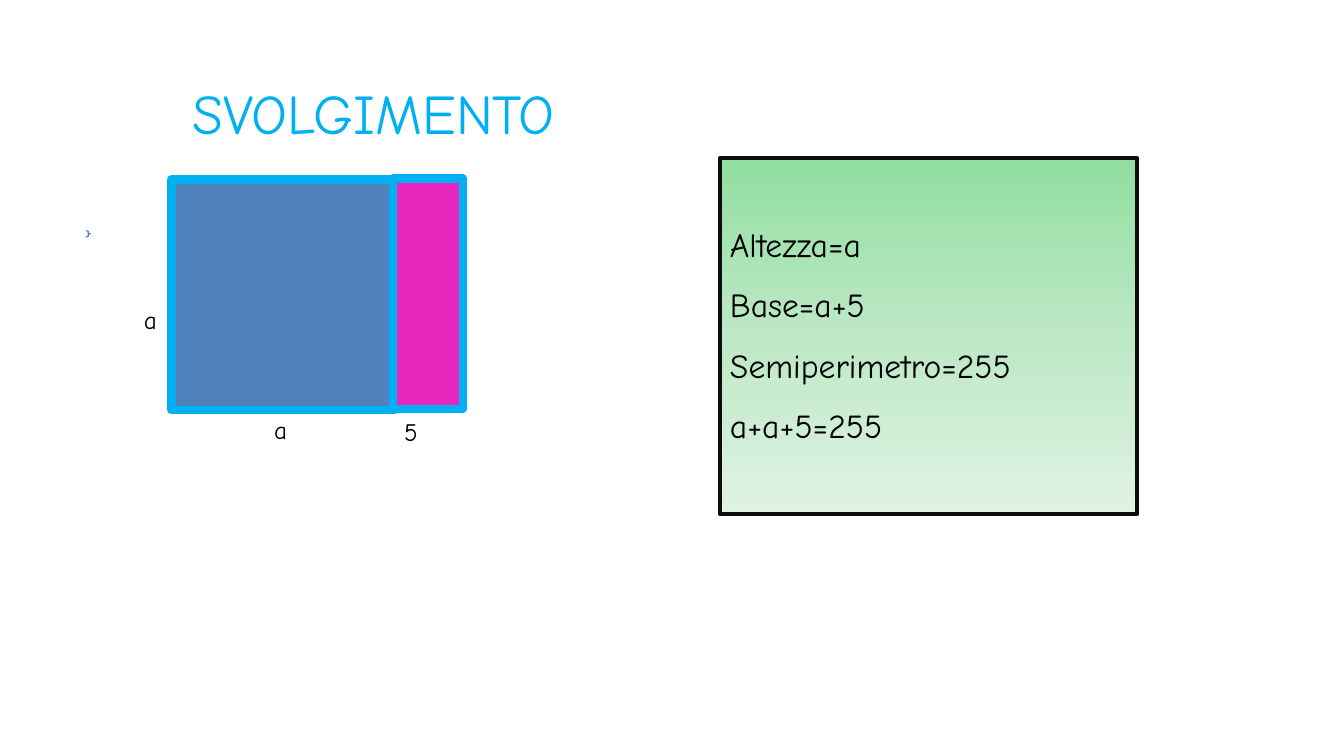
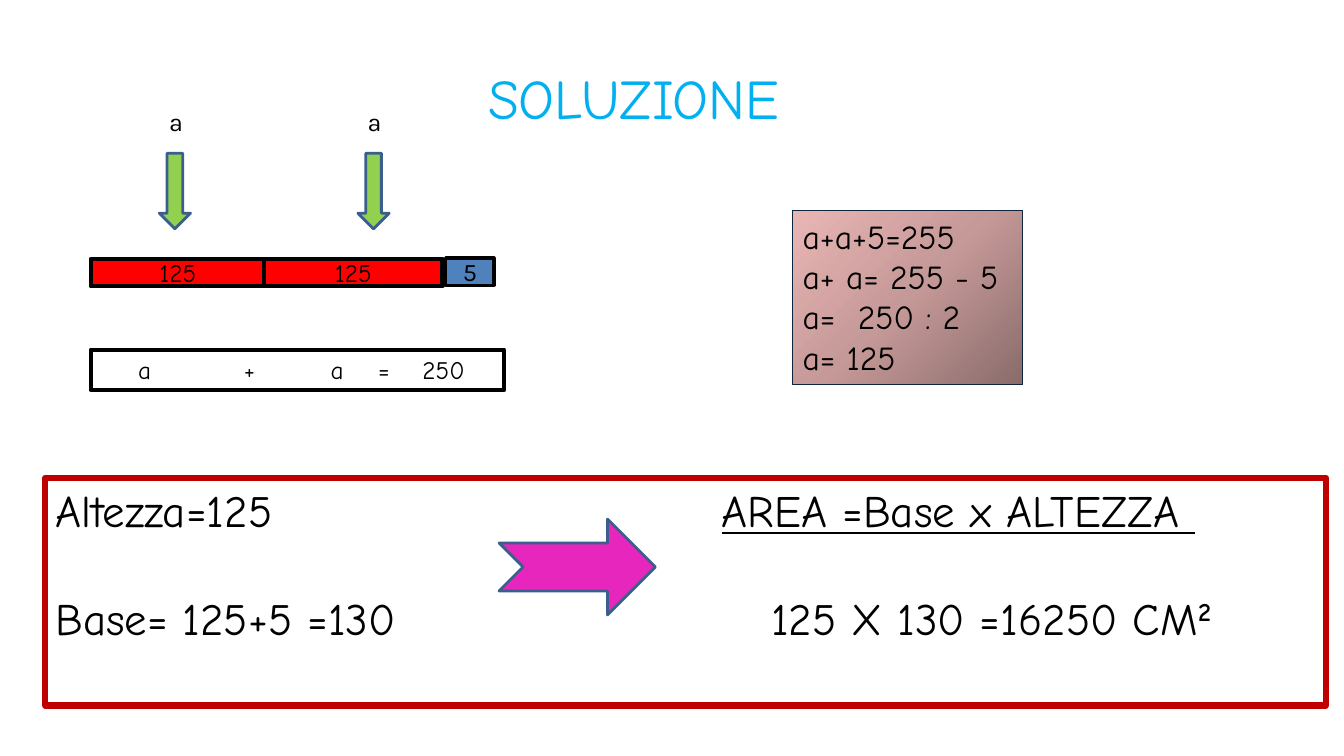
"""Build two slides that solve a rectangle problem with algebra."""
from dataclasses import dataclass

from pptx import Presentation
from pptx.dml.color import RGBColor
from pptx.enum.shapes import MSO_SHAPE
from pptx.enum.text import MSO_ANCHOR, MSO_AUTO_SIZE, PP_ALIGN
from pptx.oxml import parse_xml
from pptx.oxml.ns import nsdecls, qn
from pptx.util import Inches, Pt

RECT = MSO_SHAPE.RECTANGLE
BRACE = MSO_SHAPE.RIGHT_BRACE
DOWN = MSO_SHAPE.DOWN_ARROW
NOTCH = MSO_SHAPE.NOTCHED_RIGHT_ARROW
TOP, MID, LOW = MSO_ANCHOR.TOP, MSO_ANCHOR.MIDDLE, MSO_ANCHOR.BOTTOM
LEFT, MIDST = PP_ALIGN.LEFT, PP_ALIGN.CENTER
FIXED = MSO_AUTO_SIZE.NONE

HEX = {
    "black": "000000", "ink": "0D0D0D", "navy": "0F243E", "edge": "3A5F8C",
    "blue": "4F81BD", "sky": "00B0F0", "pink": "E626BD", "red": "FF0000",
    "wine": "C00000", "lime": "92D050",
}
GREENS = ("91DEA0", "BDE8C5", "DFF3E3")
ROSES = ("8A6C6B", "C59998", "E9B6B4")
DOWNWARD = '<a:lin ang="5400000" scaled="0"/>'
CORNER = '<a:path path="circle"><a:fillToRect l="100000" t="100000"/></a:path>'
COMIC, KARLA = "Comic Neue", "Karla"


@dataclass(frozen=True)
class Box:
    x: float
    y: float
    w: float
    h: float


@dataclass(frozen=True)
class Run:
    text: str
    under: bool = False
    bold: bool = False
    lift: int = 0


@dataclass(frozen=True)
class Style:
    size: int = 18
    font: str = COMIC
    color: str = "black"
    align: PP_ALIGN = LEFT
    anchor: MSO_ANCHOR = TOP
    pitch: float = 1.0
    gap: float = 0


@dataclass(frozen=True)
class Part:
    kind: MSO_SHAPE
    box: Box
    fill: str
    line: str
    width: float
    text: str = ""
    font: str = COMIC


TITLE = Style(size=40, color="sky")
SMALL = Style()
BAR = Style(align=MIDST, anchor=MID)


def place(shape, box: Box) -> None:
    shape.left, shape.top = Inches(box.x), Inches(box.y)
    shape.width, shape.height = Inches(box.w), Inches(box.h)


def outline(shape, color: str, width: float) -> None:
    shape.line.color.rgb = RGBColor.from_string(HEX[color])
    shape.line.width = Pt(width)


def blend(shape, stops: tuple, course: str) -> None:
    shape.fill.gradient()
    marks = "".join(
        f'<a:gs pos="{i * 50000}"><a:srgbClr val="{c}"/></a:gs>'
        for i, c in enumerate(stops))
    props = shape._element.spPr
    props.replace(props.find(qn("a:gradFill")), parse_xml(
        f'<a:gradFill {nsdecls("a")} rotWithShape="1">'
        f"<a:gsLst>{marks}</a:gsLst>{course}</a:gradFill>"))


def write(shape, rows: list, style: Style, tabs: tuple = ()) -> None:
    frame = shape.text_frame
    frame.word_wrap = True
    frame.auto_size = FIXED
    frame.vertical_anchor = style.anchor
    for i, row in enumerate(rows):
        para = frame.add_paragraph() if i else frame.paragraphs[0]
        para.alignment = style.align
        para.line_spacing = style.pitch
        para.space_before = Pt(style.gap if i else 0)
        for part in row:
            run = para.add_run()
            run.text = part.text
            font = run.font
            font.name, font.size = style.font, Pt(style.size)
            font.color.rgb = RGBColor.from_string(HEX[style.color])
            font.underline, font.bold = part.under, part.bold
            if part.lift:
                font._element.set("baseline", str(part.lift * 1000))
        if tabs:
            stops = "".join(
                f'<a:tab pos="{Inches(t)}" algn="l"/>' for t in tabs)
            para._p.get_or_add_pPr().append(parse_xml(
                f'<a:tabLst {nsdecls("a")}>{stops}</a:tabLst>'))


def label(slide, box: Box, text: str, style: Style) -> None:
    shape = slide.shapes.add_textbox(0, 0, 0, 0)
    place(shape, box)
    write(shape, [[Run(text)]], style)


def draw(slide, part: Part):
    shape = slide.shapes.add_shape(part.kind, 0, 0, 0, 0)
    place(shape, part.box)
    shape.shadow.inherit = False
    if part.fill:
        shape.fill.solid()
        shape.fill.fore_color.rgb = RGBColor.from_string(HEX[part.fill])
    else:
        shape.fill.background()
    outline(shape, part.line, part.width)
    if part.text:
        style = Style(font=part.font, align=BAR.align, anchor=BAR.anchor)
        write(shape, [[Run(part.text)]], style)
    return shape


def begin(deck, title: str, box: Box):
    slide = deck.slides.add_slide(deck.slide_layouts[1])
    place(slide.shapes.title, box)
    write(slide.shapes.title, [[Run(title)]], TITLE)
    return slide


def steps(slide, box: Box, lines: list, style: Style):
    body = slide.placeholders[1]
    place(body, box)
    write(body, [[Run(line)] for line in lines], style)
    for para in body.text_frame.paragraphs:
        props = para._p.get_or_add_pPr()
        props.set("marL", "0")
        props.set("indent", "0")
        props.append(parse_xml(f'<a:buNone {nsdecls("a")}/>'))
    return body


def setup(deck) -> None:
    slide = begin(deck, "SVOLGIMENTO", Box(1.81, 0.73, 9.84, 0.77))
    for part in (
        Part(RECT, Box(1.7, 1.78, 2.22, 2.29), "blue", "sky", 6),
        Part(RECT, Box(3.9, 1.77, 0.69, 2.29), "pink", "sky", 6),
        Part(BRACE, Box(0.85, 2.29, 0.05, 0.06), "", "blue", 0.79),
    ):
        draw(slide, part)
    for x, y, w, text in (
        (1.33, 2.97, 0.33, "a"), (2.62, 4.06, 0.73, "a"),
        (3.91, 4.08, 0.61, "5"),
    ):
        label(slide, Box(x, y, w, 0.4), text, SMALL)
    body = steps(
        slide, Box(7.14, 1.57, 4.14, 3.53),
        ["Altezza=a", "Base=a+5", "Semiperimetro=255", "a+a+5=255"],
        Style(size=24, anchor=LOW, pitch=1.5))
    body.text_frame.margin_bottom = Inches(0.68)
    blend(body, GREENS, DOWNWARD)
    outline(body, "ink", 3)


def solve(deck) -> None:
    slide = begin(deck, "SOLUZIONE", Box(4.74, 0.58, 4.77, 0.77))
    for part in (
        Part(RECT, Box(0.9, 2.57, 1.73, 0.27), "red", "black", 3, "125"),
        Part(RECT, Box(2.62, 2.57, 1.77, 0.27), "red", "black", 3, "125"),
        Part(RECT, Box(4.42, 2.56, 0.48, 0.27), "blue", "black", 2.25, "5",
             KARLA),
    ):
        draw(slide, part)
    for x in (1.58, 3.55):
        draw(slide, Part(DOWN, Box(x, 1.52, 0.31, 0.75), "lime", "edge", 2))
        label(slide, Box(x - 0.14, 1.01, 0.61, 0.4), "a",
              Style(font=KARLA, align=MIDST))

    total = draw(slide, Part(RECT, Box(0.9, 3.47, 4.1, 0.4), "", "black", 3))
    total.text_frame.margin_left = Inches(0.47)
    write(total, [[Run("a\t+\ta\t=\t250")]], SMALL, (1.05, 1.91, 2.38, 2.82))

    body = steps(
        slide, Box(7.86, 2.09, 2.28, 1.72),
        ["a+a+5=255", "a+ a= 255 - 5", "a=  250 : 2", "a= 125"],
        Style(size=24))
    blend(body, ROSES, CORNER)
    outline(body, "navy", 0.75)

    area = draw(slide, Part(RECT, Box(0.45, 4.74, 12.7, 2.26), "", "wine", 4.5))
    write(area, [
        [Run("Altezza=125\t"), Run("AREA =Base x ALTEZZA ", under=True)],
        [Run("Base= 125+5 =130\t125 X 130 =16250 CM"),
         Run("2", bold=True, lift=30)],
    ], Style(size=32, gap=38.5))
    for para, stop in zip(area.text_frame.paragraphs, (6.61, 7.1)):
        para._p.get_or_add_pPr().append(parse_xml(
            f'<a:tabLst {nsdecls("a")}>'
            f'<a:tab pos="{Inches(stop)}" algn="l"/></a:tabLst>'))
    draw(slide, Part(NOTCH, Box(4.95, 5.15, 1.55, 0.95), "pink", "edge", 2))


def main() -> None:
    deck = Presentation()
    deck.slide_width, deck.slide_height = Inches(13.33), Inches(7.5)
    setup(deck)
    solve(deck)
    deck.save("out.pptx")


if __name__ == "__main__":
    main()
